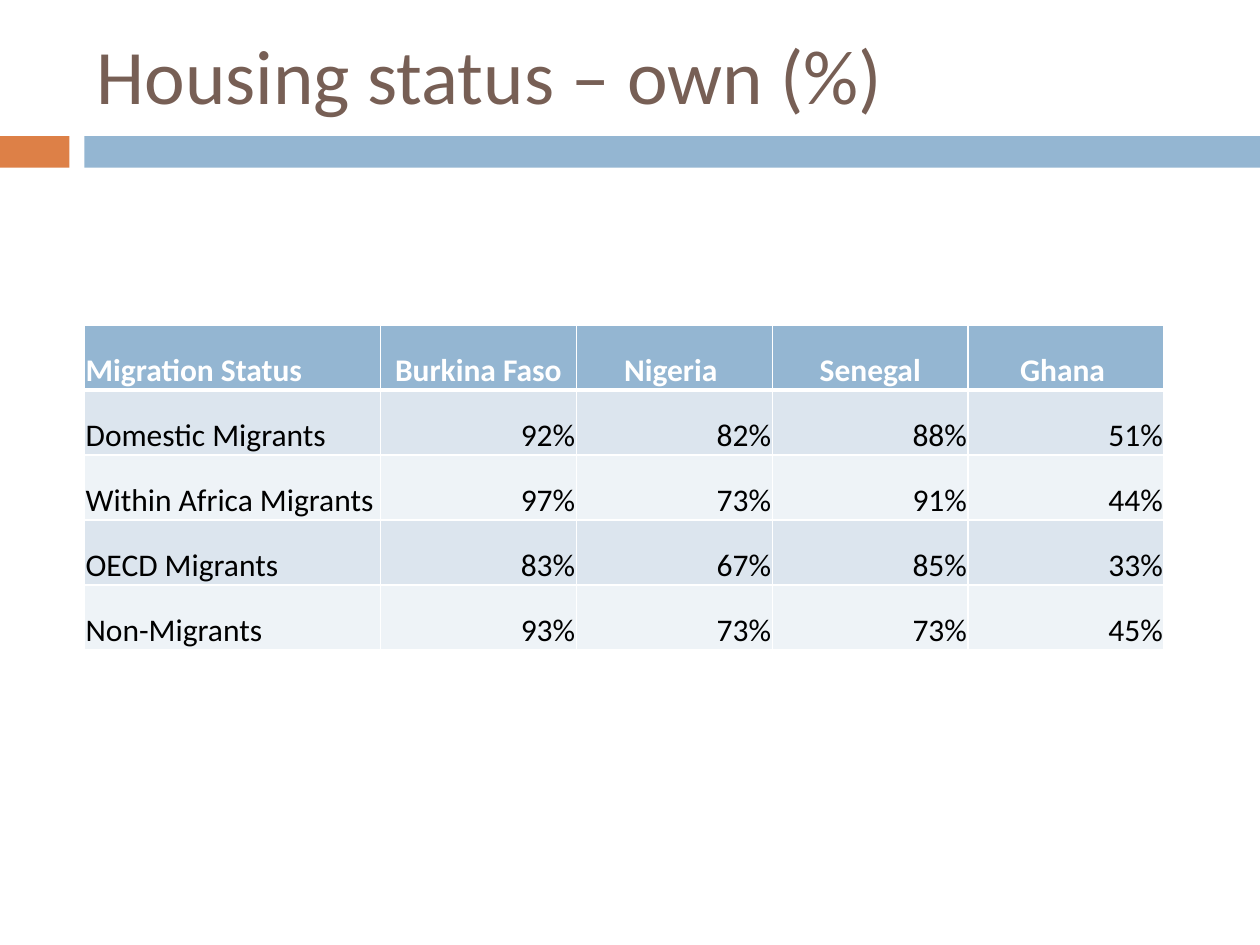
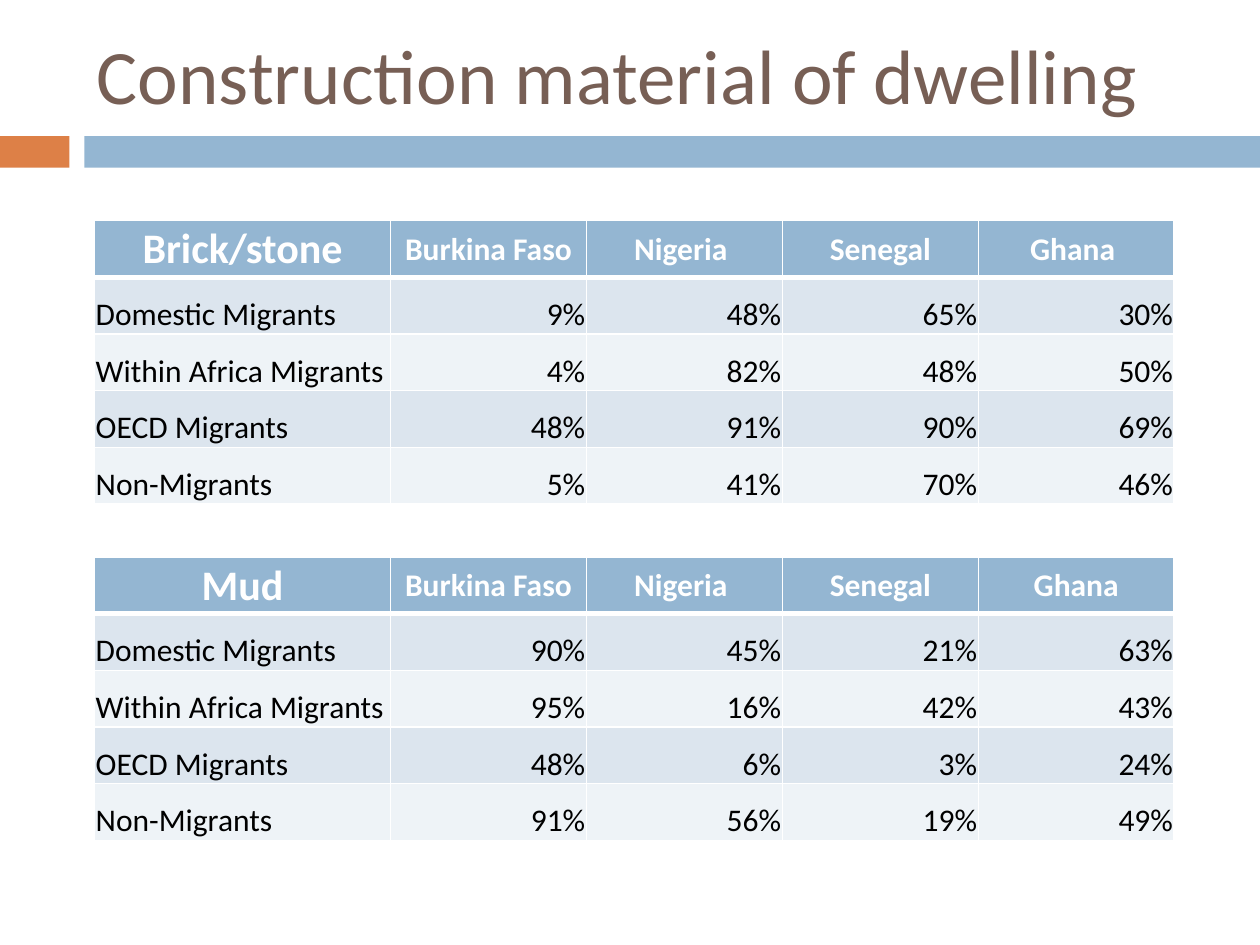
import dataclasses

import lxml.etree
import pptx
import pptx.dml.color
import pptx.enum.shapes
import pptx.enum.text
import pptx.oxml.ns
import pptx.util

Inches = pptx.util.Inches
Pt = pptx.util.Pt
Align = pptx.enum.text.PP_ALIGN
Anchor = pptx.enum.text.MSO_ANCHOR


@dataclasses.dataclass(frozen=True)
class Theme:
    font: str = "Calibri"
    title_color: str = "775F55"
    band: str = "94B6D2"
    accent: str = "DD8047"
    row_fills: tuple = ("DCE5EE", "EEF3F7")
    white: str = "FFFFFF"
    body_color: str = "000000"
    title_size: int = 44
    material_size: int = 24
    table_size: int = 18
    rule: int = 1
    header_rule: int = 3


THEME = Theme()
COUNTRIES = ["Burkina Faso", "Nigeria ", "Senegal", "Ghana "]
MIGRATION_GROUPS = ["Domestic Migrants", "Within Africa Migrants",
                    "OECD Migrants", "Non-Migrants"]
GROUP_WIDTH, COUNTRY_WIDTH = 2.35, 1.555

OWNERSHIP = [(92, 82, 88, 51), (97, 73, 91, 44), (83, 67, 85, 33), (93, 73, 73, 45)]
BRICK = [(9, 48, 65, 30), (4, 82, 48, 50), (48, 91, 90, 69), (5, 41, 70, 46)]
MUD = [(90, 45, 21, 63), (95, 16, 42, 43), (48, 6, 3, 24), (91, 56, 19, 49)]


def rgb(color):
    return pptx.dml.color.RGBColor.from_string(color)


def apply_format(target, values):
    for attribute, value in values.items():
        setattr(target, attribute, value)


def write_text(paragraph, text, size, color, bold=False, align=Align.LEFT):
    paragraph.alignment = align
    run = paragraph.add_run()
    run.text = text
    apply_format(run.font, {"name": THEME.font, "size": Pt(size), "bold": bold})
    run.font.color.rgb = rgb(color)


def add_band(slide, left, width, color):
    band = slide.shapes.add_shape(pptx.enum.shapes.MSO_SHAPE.RECTANGLE, Inches(left),
                                  Inches(1.08), Inches(width), Inches(0.25))
    band.shadow.inherit = False
    band.fill.solid()
    band.fill.fore_color.rgb = rgb(color)
    band.line.fill.background()


def add_title(slide, text):
    title = slide.shapes.add_textbox(Inches(0.67), Inches(0.17), Inches(8.92), Inches(0.83))
    apply_format(title.text_frame, {"word_wrap": True, "vertical_anchor": Anchor.MIDDLE})
    write_text(title.text_frame.paragraphs[0], text, THEME.title_size, THEME.title_color)


def add_titled_slide(deck, title):
    slide = deck.slides.add_slide(deck.slide_layouts[6])
    add_band(slide, 0.67, 9.33, THEME.band)
    add_band(slide, 0, 0.55, THEME.accent)
    add_title(slide, title)
    return slide


def set_borders(cell, top, bottom):
    """Draw white cell borders; top and bottom are widths in points."""
    properties = cell._tc.get_or_add_tcPr()
    widths = {"lnL": THEME.rule, "lnR": THEME.rule, "lnT": top, "lnB": bottom}
    for side, width in widths.items():
        line = lxml.etree.SubElement(properties, pptx.oxml.ns.qn(f"a:{side}"), w=str(Pt(width)))
        fill = lxml.etree.SubElement(line, pptx.oxml.ns.qn("a:solidFill"))
        lxml.etree.SubElement(fill, pptx.oxml.ns.qn("a:srgbClr"), val=THEME.white)


def style_cell(cell, row, header_anchor):
    set_borders(cell, top=THEME.header_rule if row == 1 else THEME.rule,
                bottom=THEME.header_rule if row == 0 else THEME.rule)
    cell.fill.solid()
    cell.fill.fore_color.rgb = rgb(THEME.row_fills[(row - 1) % 2] if row else THEME.band)
    apply_format(cell, {
        "margin_left": Inches(0.01), "margin_right": Inches(0.01),
        "margin_top": Inches(0.01), "margin_bottom": 0,
        "vertical_anchor": Anchor.BOTTOM if row else header_anchor,
    })


def add_share_table(slide, left, top, row_height, heading, shares, countries=COUNTRIES,
                    heading_size=THEME.table_size, heading_align=Align.LEFT,
                    header_anchor=Anchor.BOTTOM):
    """Add a table of percentages by migration group and country."""
    rows = [[heading, *countries]]
    rows += [[group, *(f"{share}%" for share in group_shares)]
             for group, group_shares in zip(MIGRATION_GROUPS, shares)]
    widths = [GROUP_WIDTH] + [COUNTRY_WIDTH] * len(countries)
    table = slide.shapes.add_table(len(rows), len(widths), Inches(left), Inches(top),
                                   Inches(sum(widths)), Inches(row_height * len(rows))).table
    apply_format(table, {"first_row": False, "horz_banding": False})
    for column, width in zip(table.columns, widths):
        column.width = Inches(width)
    for r, texts in enumerate(rows):
        table.rows[r].height = Inches(row_height)
        for c, text in enumerate(texts):
            cell = table.cell(r, c)
            style_cell(cell, r, header_anchor)
            if c == 0:
                align = Align.LEFT if r else heading_align
            else:
                align = Align.RIGHT if r else Align.CENTER
            write_text(cell.text_frame.paragraphs[0], text,
                       heading_size if r == c == 0 else THEME.table_size,
                       THEME.body_color if r else THEME.white, bold=r == 0, align=align)


def main():
    deck = pptx.Presentation()
    apply_format(deck, {"slide_width": Inches(10), "slide_height": Inches(7.5)})

    housing = add_titled_slide(deck, "Housing status – own (%)")
    add_share_table(housing, 0.67, 2.58, 0.516, "Migration Status", OWNERSHIP)

    construction = add_titled_slide(deck, "Construction material of dwelling")
    materials = [
        ("Brick/stone", 1.75, BRICK, COUNTRIES),
        ("Mud", 4.42, MUD, COUNTRIES[:-1] + ["Ghana"]),
    ]
    for material, top, shares, countries in materials:
        add_share_table(construction, 0.75, top, 0.45, material, shares, countries,
                        heading_size=THEME.material_size, heading_align=Align.CENTER,
                        header_anchor=Anchor.MIDDLE)

    deck.save("out.pptx")


if __name__ == "__main__":
    main()
